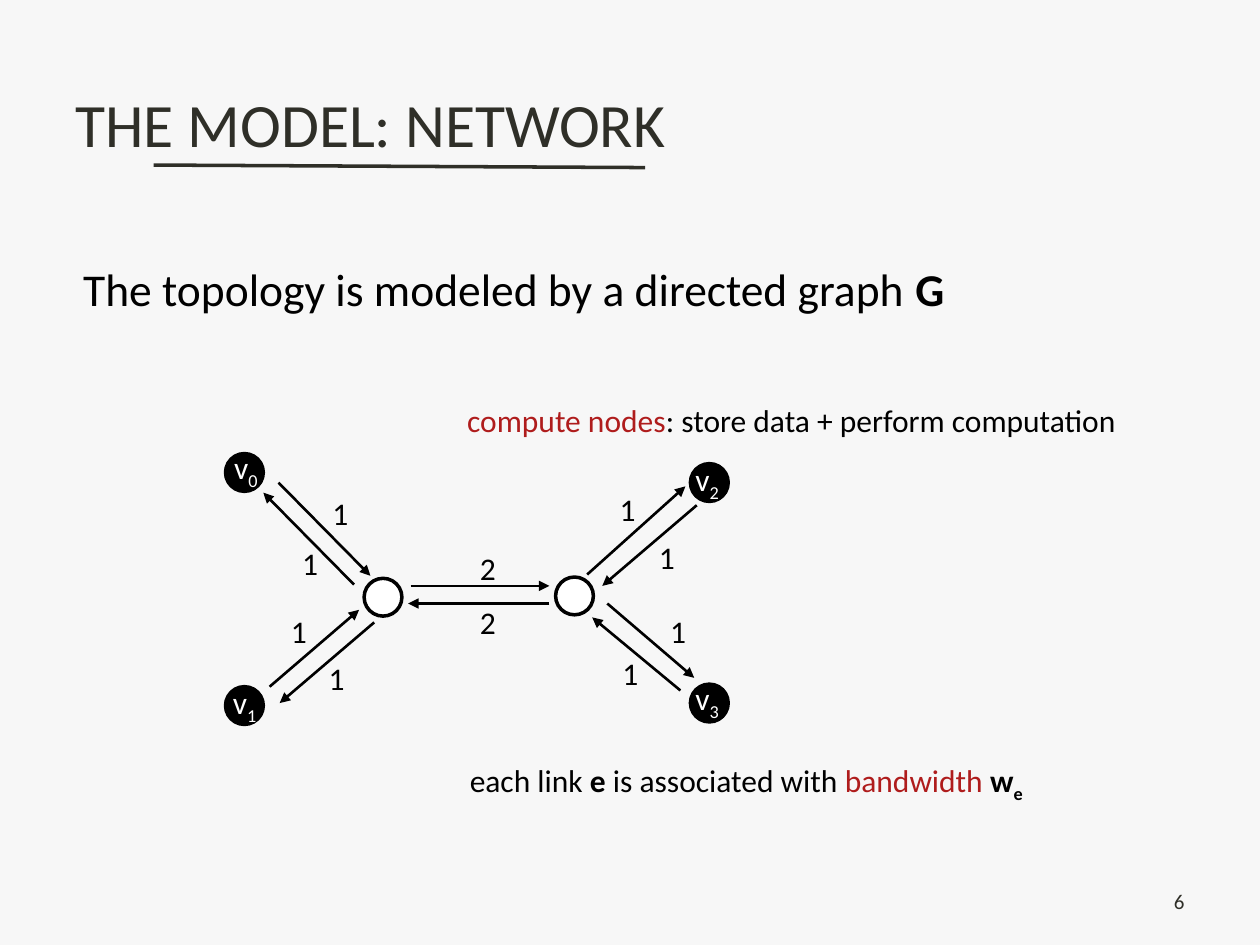
from dataclasses import dataclass

from lxml import etree
from pptx import Presentation
from pptx.dml.color import RGBColor
from pptx.enum.shapes import MSO_CONNECTOR, MSO_SHAPE
from pptx.enum.text import MSO_ANCHOR, MSO_AUTO_SIZE, PP_ALIGN
from pptx.oxml.ns import qn
from pptx.util import Inches, Pt

STRAIGHT, OVAL = MSO_CONNECTOR.STRAIGHT, MSO_SHAPE.OVAL
MIDDLE, LEFT, RIGHT = MSO_ANCHOR.MIDDLE, PP_ALIGN.LEFT, PP_ALIGN.RIGHT
NO_FIT = MSO_AUTO_SIZE.NONE
FONT = "Calibri"
BLACK, WHITE, INK, ACCENT, PAPER = "000000", "FFFFFF", "2F2F28", "AF1C1C", "F7F7F7"
NODE_SIZE = 0.3
LABEL_HEIGHT = 0.4


@dataclass
class Run:
    text: str
    color: str = BLACK
    bold: bool = False
    subscript: bool = False


@dataclass
class Node:
    left: float
    top: float
    fill: str = WHITE


@dataclass
class Link:
    start: tuple[float, float]
    end: tuple[float, float]
    bandwidth: str
    label_at: tuple[float, float]


@dataclass
class Label:
    left: float
    top: float
    width: float
    runs: list[Run]


def rgb(value: str) -> RGBColor:
    return RGBColor.from_string(value)


def place(shape, left: float, top: float, width: float, height: float) -> None:
    shape.left, shape.top = Inches(left), Inches(top)
    shape.width, shape.height = Inches(width), Inches(height)


def write(frame, runs: list[Run], size: int, align=LEFT):
    frame.auto_size = NO_FIT
    paragraph = frame.paragraphs[0]
    paragraph.alignment = align
    paragraph.font.name, paragraph.font.size = FONT, Pt(size)
    for part in runs:
        run = paragraph.add_run()
        run.text = part.text
        run.font.color.rgb = rgb(part.color)
        run.font.bold = part.bold
        if part.subscript:
            run.font._element.set("baseline", "-25000")
    return paragraph


def draw_label(slide, label: Label) -> None:
    box = slide.shapes.add_textbox(Inches(label.left), Inches(label.top),
                                   Inches(label.width), Inches(LABEL_HEIGHT))
    box.text_frame.word_wrap = False
    write(box.text_frame, label.runs, 18)


def draw_line(slide, start: tuple[float, float], end: tuple[float, float],
              color: str, width: float, arrow: bool = False) -> None:
    line = slide.shapes.add_connector(STRAIGHT, *map(Inches, start + end))
    line.line.color.rgb = rgb(color)
    line.line.width = Pt(width)
    if arrow:
        etree.SubElement(line.line._get_or_add_ln(), qn("a:tailEnd"), type="triangle")
    etree.SubElement(line._element.spPr, qn("a:effectLst"))


def draw_node(slide, node: Node) -> None:
    circle = slide.shapes.add_shape(OVAL, Inches(node.left), Inches(node.top),
                                    Inches(NODE_SIZE), Inches(NODE_SIZE))
    circle.shadow.inherit = False
    circle.fill.solid()
    circle.fill.fore_color.rgb = rgb(node.fill)
    circle.line.color.rgb = rgb(BLACK)
    circle.line.width = Pt(2)


NODES = [
    Node(1.79, 3.6, BLACK), Node(1.79, 5.45, BLACK),
    Node(5.48, 3.68, BLACK), Node(5.48, 5.43, BLACK),
    Node(2.89, 4.59), Node(4.41, 4.58),
]
# Label positions of v0 to v3
NODE_LABELS = [(1.76, 3.51), (1.75, 5.37), (5.42, 3.6), (5.42, 5.34)]

LINKS = [
    # Between the two routers
    Link((3.26, 4.65), (4.36, 4.65), "2", (3.71, 4.31)),
    Link((4.36, 4.79), (3.24, 4.79), "2", (3.71, 4.74)),
    # Left side
    Link((2.21, 3.83), (2.94, 4.57), "1", (2.54, 3.87)),
    Link((2.81, 4.64), (2.09, 3.91), "1", (2.3, 4.27)),
    Link((2.14, 5.45), (2.85, 4.84), "1", (2.21, 4.81)),
    Link((2.97, 4.94), (2.22, 5.58), "1", (2.51, 5.18)),
    # Right side
    Link((4.66, 4.56), (5.44, 3.86), "1", (4.82, 3.84)),
    Link((5.53, 4.01), (4.78, 4.65), "1", (5.13, 4.22)),
    Link((4.82, 4.79), (5.51, 5.38), "1", (5.22, 4.81)),
    Link((5.4, 5.48), (4.7, 4.9), "1", (4.84, 5.14)),
]

REMARKS = [
    Label(3.61, 3.13, 5.47, [Run("compute nodes", ACCENT),
                             Run(": store data + perform computation")]),
    Label(3.63, 5.99, 4.68, [Run("each link "), Run("e", bold=True),
                             Run(" is associated with "), Run("bandwidth ", ACCENT),
                             Run("w", bold=True), Run("e", bold=True, subscript=True)]),
]


def main() -> None:
    prs = Presentation()
    prs.slide_width, prs.slide_height = Inches(10), Inches(7.5)
    slide = prs.slides.add_slide(prs.slide_layouts[1])
    slide.background.fill.solid()
    slide.background.fill.fore_color.rgb = rgb(PAPER)

    # Title with its underline
    title = slide.shapes.title
    place(title, 0.5, 0.3, 9, 1.25)
    title.text_frame.vertical_anchor = MIDDLE
    heading = write(title.text_frame, [Run("the model: network", INK)], 44)
    heading.runs[0].font._element.set("cap", "small")
    draw_line(slide, (1.22, 1.31), (5.12, 1.33), INK, 2)

    # Statement, without a bullet
    statement = slide.placeholders[1]
    place(statement, 0.5, 2.02, 8.58, 0.68)
    sentence = write(statement.text_frame,
                     [Run("The topology is modeled by a directed graph "),
                      Run("G", bold=True)], 26)
    properties = sentence._p.get_or_add_pPr()
    properties.set("marL", str(Inches(0.06)))
    properties.set("indent", "0")
    properties.insert_element_before(etree.Element(qn("a:buNone")), "a:defRPr")

    # Network graph
    for link in LINKS:
        draw_line(slide, link.start, link.end, BLACK, 1.5, arrow=True)
        draw_label(slide, Label(*link.label_at, 0.32, [Run(link.bandwidth)]))
    for node in NODES:
        draw_node(slide, node)
    for index, (left, top) in enumerate(NODE_LABELS):
        draw_label(slide, Label(left, top, 0.4, [
            Run("v", WHITE), Run(str(index), WHITE, subscript=True)]))

    # Remarks on nodes and links
    for remark in REMARKS:
        draw_label(slide, remark)

    # Slide number
    number = slide.shapes.add_textbox(Inches(7.17), Inches(6.95), Inches(2.33), Inches(0.4))
    number.text_frame.word_wrap = True
    number.text_frame.vertical_anchor = MIDDLE
    write(number.text_frame, [Run("6", INK)], 12, RIGHT)

    prs.save("out.pptx")


if __name__ == "__main__":
    main()
